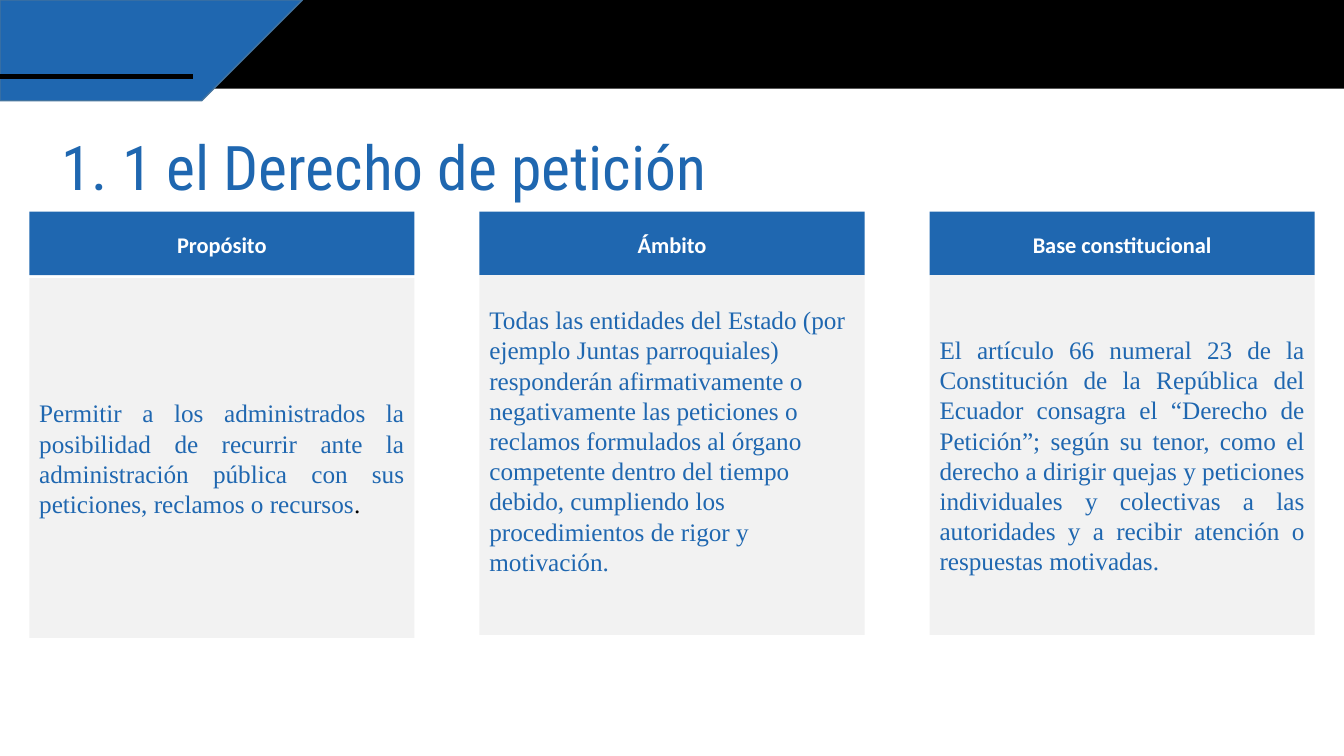
import pptx
import pptx.util
import pptx.dml.color
import pptx.enum.shapes
import pptx.enum.text
import pptx.oxml.ns
import lxml.etree

Inches, Pt = pptx.util.Inches, pptx.util.Pt
ALIGN = pptx.enum.text.PP_ALIGN
ANCHOR = pptx.enum.text.MSO_ANCHOR
COLORS = {"blue": "1F67B0", "edge": "43739E", "black": "000000", "white": "FFFFFF", "grey": "F2F2F2"}
LEFT, STEP, WIDTH = 0.29, 4.465, 3.82
HEAD_TOP, HEAD_H, BODY_H = 2.1, 0.63, 3.57
COLUMNS = [
    ("Propósito", 0.03, ALIGN.JUSTIFY, 0.05, [
        ("Permitir a los administrados la posibilidad de recurrir ante la administración pública "
         "con sus peticiones, reclamos o recursos", "blue"), (".", "black")]),
    ("Ámbito", 0, ALIGN.LEFT, 0.34, [
        ("Todas las entidades del Estado (por ejemplo Juntas parroquiales) responderán "
         "afirmativamente o negativamente las peticiones o reclamos formulados al órgano competente "
         "dentro del tiempo debido, cumpliendo los procedimientos de rigor y motivación.", "blue")]),
    ("Base constitucional", 0, ALIGN.JUSTIFY, 0.05, [
        ("El artículo 66 numeral 23 de la Constitución de la República del Ecuador consagra el "
         "“Derecho de Petición”; según su tenor, como el derecho a dirigir quejas y peticiones "
         "individuales y colectivas a las autoridades y a recibir atención o respuestas "
         "motivadas.", "blue")]),
]


def add_box(x, y, w, h, color):
    sp = s.shapes.add_shape(pptx.enum.shapes.MSO_SHAPE.RECTANGLE, Inches(x), Inches(y), Inches(w), Inches(h))
    sp.shadow.inherit = False
    sp.fill.solid()
    sp.fill.fore_color.rgb = pptx.dml.color.RGBColor.from_string(COLORS[color])
    sp.line.fill.background()
    return sp


def add_run(p, text, font, size, color, bold=False):
    r = p.add_run()
    r.text = text
    r.font.name, r.font.size, r.font.bold = font, Pt(size), bold
    r.font.color.rgb = pptx.dml.color.RGBColor.from_string(COLORS[color])


prs = pptx.Presentation()
prs.slide_width, prs.slide_height = Inches(13.33), Inches(7.5)
s = prs.slides.add_slide(prs.slide_layouts[5])

add_box(0, 0, 13.33, 0.88, "black")

fb = s.shapes.build_freeform(0, 0, scale=Inches(1))
fb.add_line_segments([(2.66, 0), (1.53, 0.87), (0, 0.87)], close=True)
corner = fb.convert_to_shape()
corner.shadow.inherit = False
corner.fill.solid()
corner.fill.fore_color.rgb = pptx.dml.color.RGBColor.from_string(COLORS["blue"])
corner.line.color.rgb = pptx.dml.color.RGBColor.from_string(COLORS["edge"])
corner.line.width = Pt(1)

stripe = s.shapes.add_connector(pptx.enum.shapes.MSO_CONNECTOR.STRAIGHT, 0, Inches(0.76), Inches(1.91), Inches(0.76))
stripe.line.color.rgb = pptx.dml.color.RGBColor.from_string(COLORS["black"])
stripe.line.width = Pt(3)
lxml.etree.SubElement(stripe._element.spPr, pptx.oxml.ns.qn("a:effectLst"))

for i, (heading, gap, align, bottom, runs) in enumerate(COLUMNS):
    x = LEFT + i * STEP
    head = add_box(x, HEAD_TOP, WIDTH, HEAD_H, "blue")
    body = add_box(x, HEAD_TOP + HEAD_H + gap, WIDTH, BODY_H, "grey")
    for sp in (head, body):
        sp.text_frame.word_wrap = True
        sp.text_frame.vertical_anchor = ANCHOR.MIDDLE
    p = head.text_frame.paragraphs[0]
    p.alignment, p.line_spacing = ALIGN.CENTER, 1.07
    add_run(p, heading, "Calibri", 16, "white", True)
    body.text_frame.margin_bottom = Inches(bottom)
    p = body.text_frame.paragraphs[0]
    p.alignment = align
    for text, color in runs:
        add_run(p, text, "Times New Roman", 18, color)

title = s.shapes.title
title.left, title.top, title.width, title.height = Inches(0.51), Inches(1.23), Inches(11.94), Inches(0.84)
tf = title.text_frame
tf.word_wrap = True
tf.auto_size = pptx.enum.text.MSO_AUTO_SIZE.NONE
tf.vertical_anchor = ANCHOR.TOP
p = tf.paragraphs[0]
p.alignment = ALIGN.LEFT
add_run(p, "1. 1 el Derecho de petición", "Roboto Condensed", 44, "blue")

prs.save("out.pptx")
